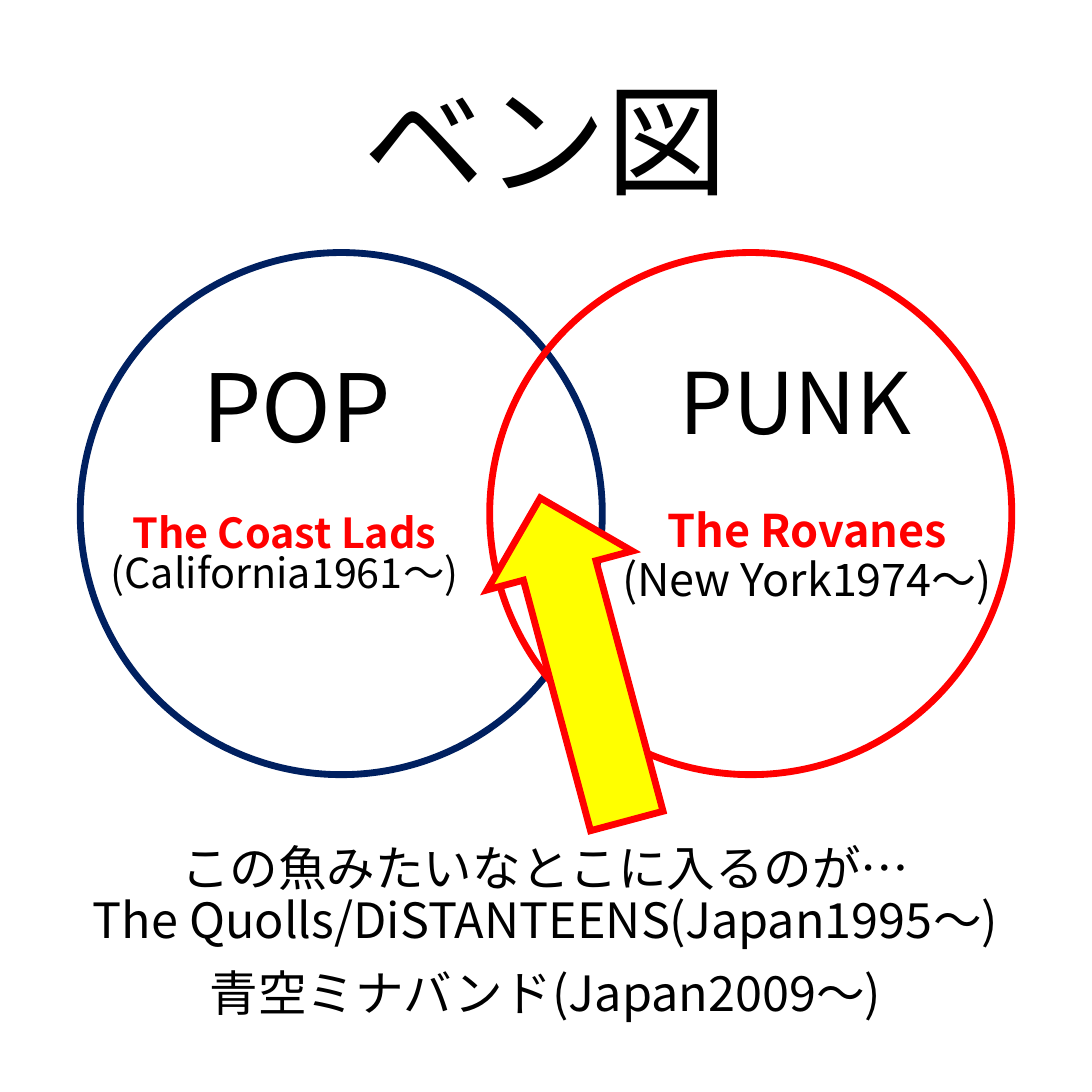
from lxml.etree import SubElement
from pptx import Presentation
from pptx.dml.color import RGBColor
from pptx.enum.lang import MSO_LANGUAGE_ID as Language
from pptx.enum.shapes import MSO_SHAPE as Shape
from pptx.enum.text import MSO_ANCHOR as Anchor, MSO_AUTO_SIZE as AutoSize, PP_ALIGN as Align
from pptx.oxml.ns import qn
from pptx.util import Pt

EMU_PER_PX = 9525
SIDE = 1280
FONT = "Noto Sans CJK JP"
COLORS = {"black": "000000", "red": "FF0000", "navy": "002060", "yellow": "FFFF00"}


def px(*lengths):
    return [round(length * EMU_PER_PX) for length in lengths]


def color(name):
    return RGBColor.from_string(COLORS[name])


def place(shape, box):
    shape.left, shape.top, shape.width, shape.height = px(*box)


def add_run(paragraph, text, size, ink, bold):
    run = paragraph.add_run()
    run.text = text
    run.font.name, run.font.size, run.font.bold = FONT, Pt(size), bold
    run.font.language_id = Language.JAPANESE
    run.font.color.rgb = color(ink)
    # East Asian glyphs take the same typeface
    SubElement(run.font._element, qn("a:ea"), typeface=FONT)


def write(shape, *paragraphs, size, spacing=0.9, before=0, anchor=Anchor.TOP,
          first_ink="black", first_bold=False):
    """Each paragraph is a list of lines; the very first line may be accented."""
    frame = shape.text_frame
    frame.word_wrap, frame.auto_size = True, AutoSize.NONE
    frame.vertical_anchor = anchor
    ink, bold = first_ink, first_bold
    for number, lines in enumerate(paragraphs):
        paragraph = frame.add_paragraph() if number else frame.paragraphs[0]
        paragraph.alignment = Align.CENTER
        paragraph.line_spacing, paragraph.space_before = spacing, Pt(before)
        for position, line in enumerate(lines):
            if position:
                paragraph.add_line_break()
            add_run(paragraph, line, size, ink, bold)
            ink, bold = "black", False


def add_text(slide, box, *paragraphs, **style):
    write(slide.shapes.add_textbox(*px(*box)), *paragraphs, **style)


def add_outlined(slide, kind, box, line, fill=None, rotation=0):
    shape = slide.shapes.add_shape(kind, *px(*box))
    shape.shadow.inherit = False
    shape.rotation = rotation
    shape.line.color.rgb, shape.line.width = color(line), Pt(6)
    # Sharp corners
    SubElement(shape.line._get_or_add_ln(), qn("a:miter"), lim="800000")
    if fill:
        shape.fill.solid()
        shape.fill.fore_color.rgb = color(fill)
    else:
        shape.fill.background()


def main():
    presentation = Presentation()
    presentation.slide_width, presentation.slide_height = px(SIDE, SIDE)
    slide = presentation.slides.add_slide(presentation.slide_layouts[5])

    # Title and conclusion
    place(slide.shapes.title, (160, 77, 960, 177))
    write(slide.shapes.title, ["ベン図"], size=106.7, anchor=Anchor.BOTTOM)
    add_text(slide, (73, 985, 1133, 238),
             ["この魚みたいなとこに入るのが…", "The Quolls/DiSTANTEENS(Japan1995～)"],
             ["青空ミナバンド(Japan2009～)"], size=42.7, before=17.8)

    # Overlapping circles
    for left, line in ((94, "navy"), (574, "red")):
        add_outlined(slide, Shape.OVAL, (left, 296, 612, 612), line)

    # Genre names
    for box, genre, size in (((189, 432, 317, 110), "POP", 82.7),
                             ((774, 421, 317, 110), "PUNK", 74.7)):
        add_text(slide, box, [genre], size=size, spacing=0.7, anchor=Anchor.BOTTOM)

    # Example bands
    for box, lines, size, spacing in (
            ((120, 601, 427, 137), ["The Coast Lads", "(California1961～)"], 36.3, 0.8),
            ((716, 592, 460, 159), ["The Rovanes", "(New York1974～)"], 39.5, 0.9)):
        add_text(slide, box, lines, size=size, spacing=spacing, before=17.8,
                 first_ink="red", first_bold=True)

    # Arrow into the overlap
    add_outlined(slide, Shape.RIGHT_ARROW, (488, 685, 392, 176), "red",
                 fill="yellow", rotation=255)

    presentation.save("out.pptx")


if __name__ == "__main__":
    main()
